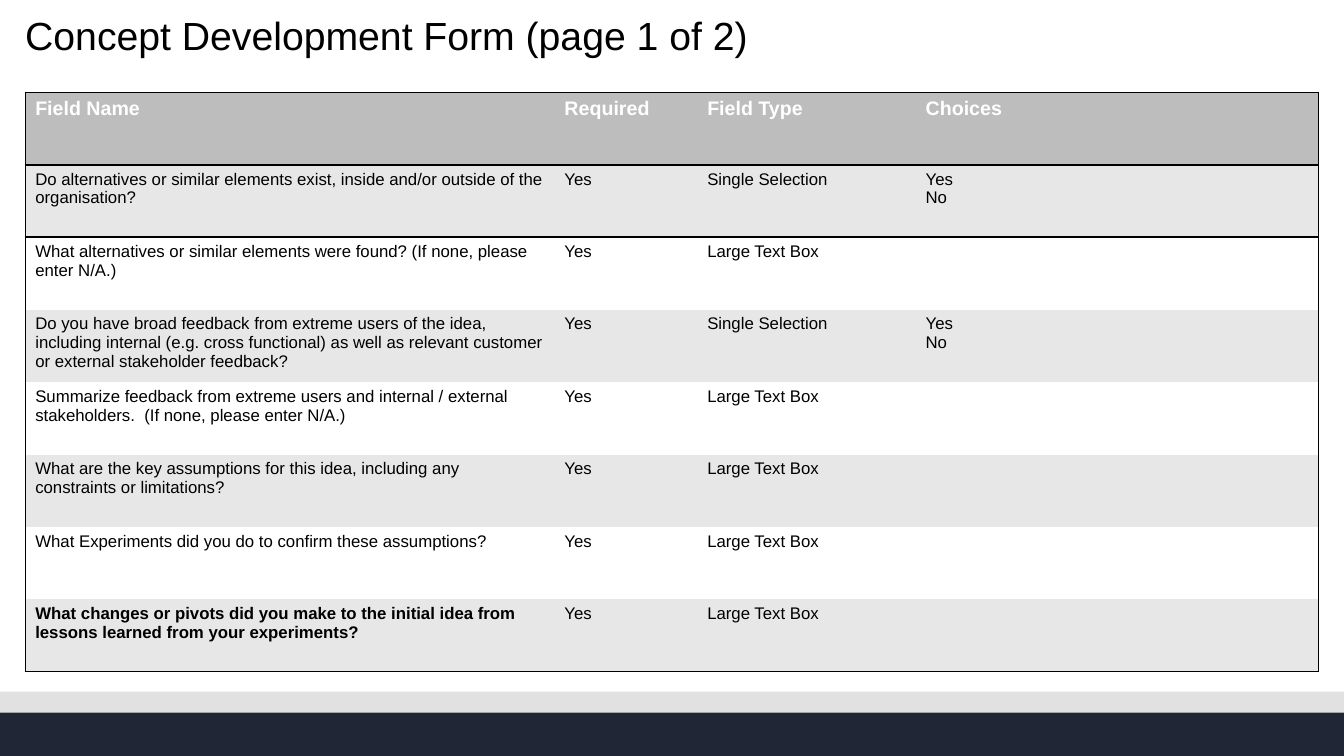
"""Build the first page of the concept development form."""
from lxml import etree
from pptx import Presentation
from pptx.dml import color
from pptx.enum import shapes, text
from pptx.oxml import ns
from pptx.util import Pt


def write(frame, content, size=12, ink="000000", bold=False, spacing=None):
    frame.text = content
    for para in frame.paragraphs:
        para.line_spacing = spacing
        for span in para.runs:
            span.font.name = "Arial"
            span.font.size = Pt(size)
            span.font.bold = bold
            span.font.color.rgb = color.RGBColor.from_string(ink)


def paint(fill, shade):
    fill.solid()
    fill.fore_color.rgb = color.RGBColor.from_string(shade)


deck = Presentation()
deck.slide_width, deck.slide_height = Pt(960), Pt(540)
page = deck.slides.add_slide(deck.slide_layouts[6])

for top, height, shade in [(494, 15, "E1E1E1"), (509, 31, "212637")]:
    band = page.shapes.add_shape(shapes.MSO_SHAPE.RECTANGLE, 0, Pt(top), Pt(960), Pt(height))
    band.shadow.inherit = False
    paint(band.fill, shade)
    band.line.fill.background()

title = page.shapes.add_textbox(Pt(18), Pt(12), Pt(777), Pt(42)).text_frame
title.margin_left = title.margin_right = title.margin_top = title.margin_bottom = 0
title.word_wrap = True
title.vertical_anchor = text.MSO_ANCHOR.TOP
write(title, "Concept Development Form (page 1 of 2)", size=28, spacing=0.9)

choice = ("Yes", "Single Selection", "Yes\nNo")
essay = ("Yes", "Large Text Box", "")
rows = [
    ("Field Name", "Required", "Field Type", "Choices"),
    ("Do alternatives or similar elements exist, inside and/or outside of the organisation?", *choice),
    ("What alternatives or similar elements were found? (If none, please enter N/A.)", *essay),
    ("Do you have broad feedback from extreme users of the idea, including internal "
     "(e.g. cross functional) as well as relevant customer or external stakeholder feedback?", *choice),
    ("Summarize feedback from extreme users and internal / external stakeholders.  "
     "(If none, please enter N/A.)", *essay),
    ("What are the key assumptions for this idea, including any constraints or limitations?", *essay),
    ("What Experiments did you do to confirm these assumptions?", *essay),
    ("What changes or pivots did you make to the initial idea from lessons learned "
     "from your experiments?", *essay),
]
widths = [378, 102, 156, 288]
last_row, last_column = len(rows) - 1, len(widths) - 1

table = page.shapes.add_table(len(rows), len(widths), Pt(18), Pt(66), Pt(924), Pt(414)).table
table.first_row = True
table.horz_banding = False
no_grid_style = "{2D5ABB26-0587-4C30-8999-92F81FD0307C}"
table._tbl.tblPr.find(ns.qn("a:tableStyleId")).text = no_grid_style
for column, width in zip(table.columns, widths):
    column.width = Pt(width)

for r, row in enumerate(rows):
    table.rows[r].height = Pt(51.75)
    for c, content in enumerate(row):
        cell = table.cell(r, c)
        header = r == 0
        write(cell.text_frame, content, size=14 if header else 12,
              ink="FFFFFF" if header else "000000",
              bold=header or (r == last_row and c == 0))
        borders = {
            "lnL": 1 if c == 0 else 0,
            "lnR": 1 if c == last_column else 0,
            "lnT": 1 if header else 2 if r == 1 else 0,
            "lnB": 2 if header else 1 if r == last_row else 0,
        }
        properties = cell._tc.get_or_add_tcPr()
        for side, weight in borders.items():
            if weight:
                line = etree.SubElement(properties, ns.qn(f"a:{side}"), w=str(Pt(weight)))
                ink = etree.SubElement(line, ns.qn("a:solidFill"))
                etree.SubElement(ink, ns.qn("a:srgbClr"), val="000000")
        paint(cell.fill, "BDBDBD" if header else "E7E7E7" if r % 2 else "FFFFFF")

deck.save("out.pptx")
